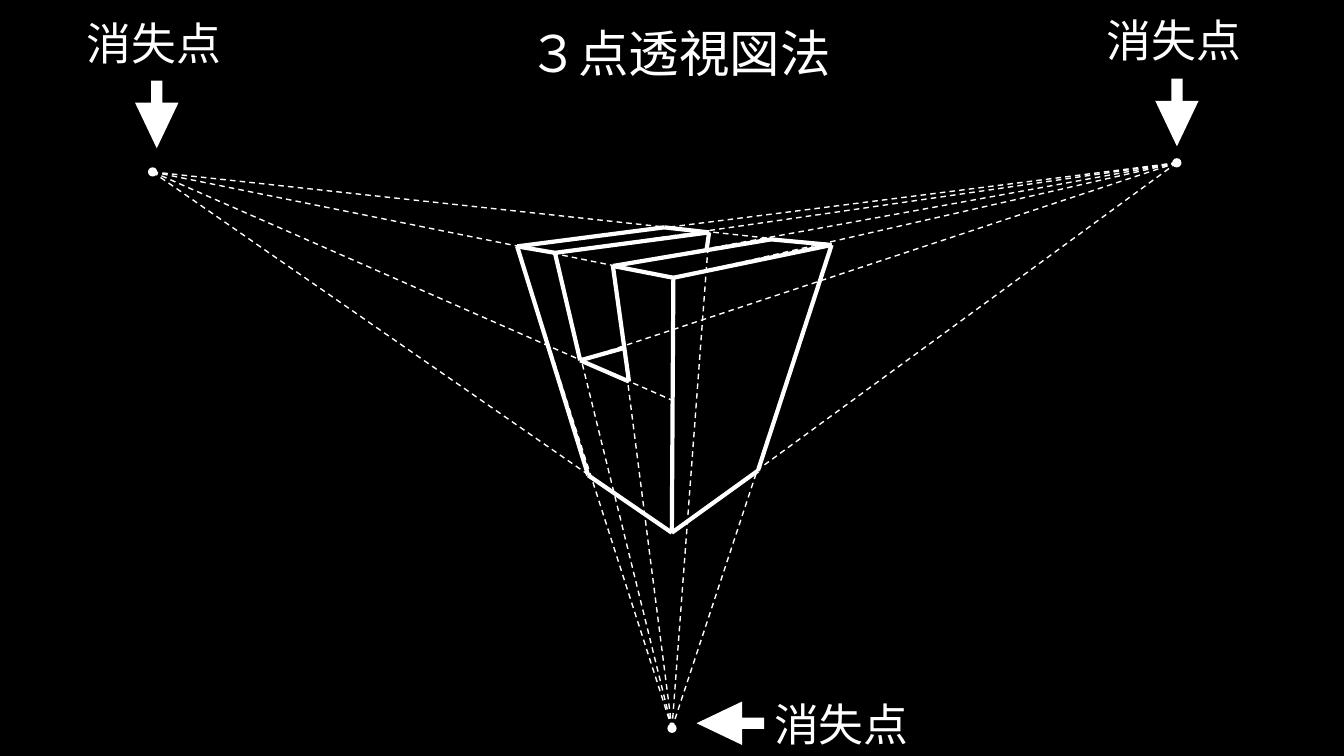
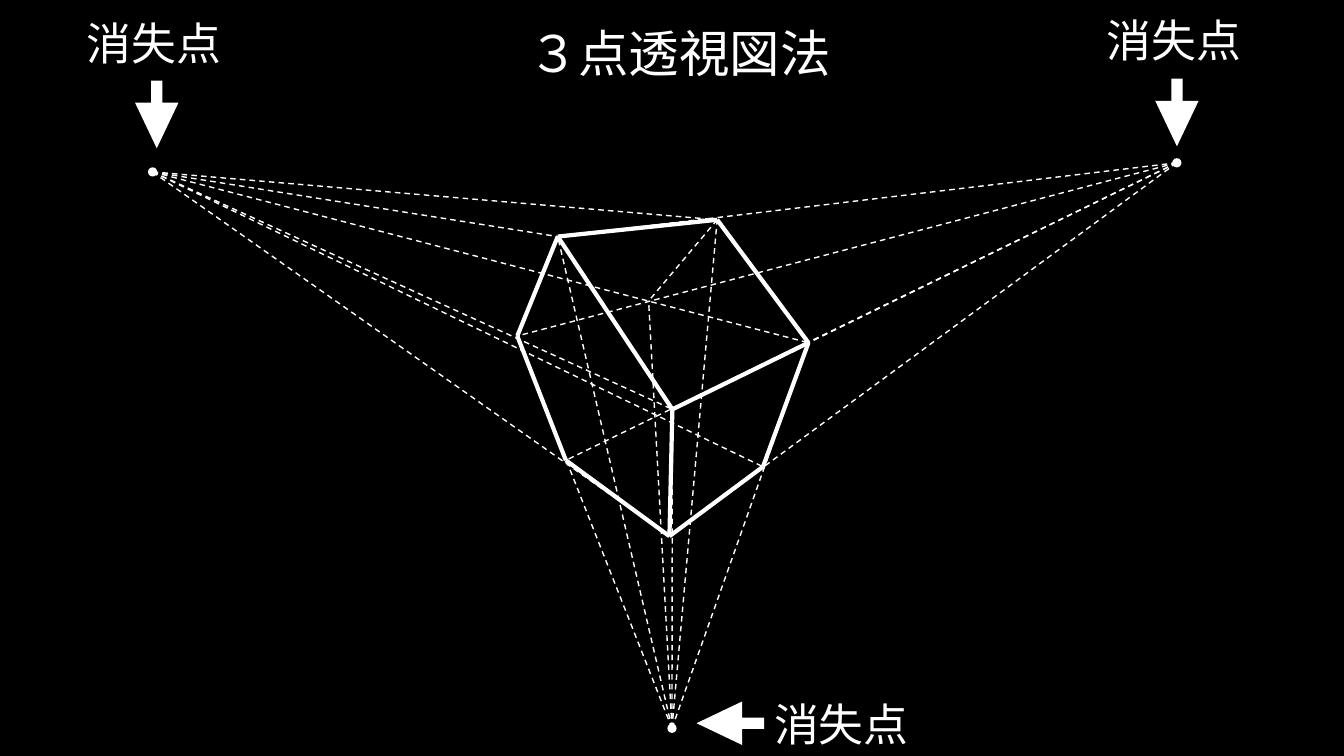
from lxml import etree
from pptx import Presentation
from pptx.dml.color import RGBColor
from pptx.enum.dml import MSO_LINE
from pptx.enum.shapes import MSO_CONNECTOR, MSO_SHAPE
from pptx.enum.text import MSO_ANCHOR, MSO_AUTO_SIZE, PP_ALIGN
from pptx.oxml.ns import qn
from pptx.util import Pt

STRAIGHT = MSO_CONNECTOR.STRAIGHT
DOT, ARROW = MSO_SHAPE.OVAL, MSO_SHAPE.LEFT_ARROW
DASH, SOLID = MSO_LINE.DASH, MSO_LINE.SOLID
LEFT, JUSTIFY = PP_ALIGN.LEFT, PP_ALIGN.JUSTIFY

INK = "FFFFFF"
PAPER = "000000"
FONT = "Noto Sans CJK JP"
TITLE = "３点透視図法"
VANISHING_LABEL = "消失点"
DOT_SIZE = 6.6
ARROW_WIDTH, ARROW_HEIGHT = 48.4, 31

VANISHING = {
    "left": (109, 122.8),
    "right": (840.6, 116.3),
    "bottom": (480, 520.2),
}
LABELS = [
    ((54.7, 7.9), (87.8, 66.2), 270),
    ((783.4, 5.8), (816.5, 64.8), 270),
    ((545.8, 493.9), (497.5, 501.1), 0),
]

notched_block = {
    "corners": {
        "top left": (369.4, 176),
        "notch left": (396.4, 180.6),
        "notch right": (437.8, 190),
        "top front": (481, 198.4),
        "top right": (594, 175),
        "notch right far": (550.8, 171),
        "notch left far": (506.5, 166),
        "top back": (474.5, 162.4),
        "floor left": (414.4, 257.4),
        "floor right": (449.3, 272.5),
        "floor far": (446.4, 248.4),
        "wall end": (504.7, 178.6),
        "base left": (420.1, 339.5),
        "base front": (479.9, 380.5),
        "base right": (541.4, 336.2),
        "front middle": (481.7, 286.6),
    },
    "edges": [
        ["top left", "base left", "base front", "base right", "top right", "top front", "base front"],
        ["top front", "notch right", "notch right far", "top right"],
        ["notch right", "floor right", "floor left", "floor far"],
        ["floor left", "notch left", "top left", "top back", "notch left far", "notch left"],
        ["notch left far", "wall end"],
    ],
    "rays": {
        "left": ["base front", "top right", "front middle", "top front"],
        "right": ["notch left", "base front", "floor left", "top left", "notch right", "top front"],
        "bottom": ["top right", "notch left far", "notch right", "top left", "notch left"],
    },
}

tilted_box = {
    "corners": {
        "top left": (398.4, 169),
        "top back": (512.3, 157),
        "top right": (577.5, 244.8),
        "top front": (480.3, 292.4),
        "side left": (369.5, 240),
        "base left": (404.2, 328.8),
        "base front": (478.2, 383),
        "base right": (545, 333.4),
        "hidden": (463.3, 215),
    },
    "edges": [
        ["top left", "side left", "base left", "base front", "base right",
         "top right", "top back", "top left", "top front", "base front"],
        ["top front", "top right"],
    ],
    "rays": {
        "left": ["base front", "top back", "top front", "top left", "top right", "base right"],
        "right": ["base left", "base front", "top front", "top left", "side left"],
        "bottom": ["top right", "side left", "top left", "top back", "hidden", "top front"],
        "top back": ["hidden"],
    },
}


def color(value):
    return RGBColor.from_string(value)


def write(box, place, text, size, align):
    box.left, box.top, box.width, box.height = [Pt(n) for n in place]
    frame = box.text_frame
    frame.text = text
    frame.word_wrap = True
    frame.auto_size = MSO_AUTO_SIZE.SHAPE_TO_FIT_TEXT
    frame.vertical_anchor = MSO_ANCHOR.TOP
    paragraph = frame.paragraphs[0]
    paragraph.alignment = align
    paragraph.font.name = FONT
    paragraph.font.size = Pt(size)
    paragraph.font.color.rgb = color(INK)
    east_asian = etree.SubElement(paragraph.font._rPr, qn("a:ea"))
    east_asian.set("typeface", FONT)


prs = Presentation()
prs.slide_width, prs.slide_height = Pt(960), Pt(540)
backdrop = prs.slide_master.background.fill
backdrop.solid()
backdrop.fore_color.rgb = color(PAPER)
title_only = prs.slide_layouts[5]

for solid in (notched_block, tilted_box):
    slide = prs.slides.add_slide(title_only)
    write(slide.shapes.title, (370, 12.2, 247, 51), TITLE, 36, LEFT)

    points = {**VANISHING, **solid["corners"]}
    rays = [(source, corner, 1, DASH)
            for source, corners in solid["rays"].items() for corner in corners]
    edges = [(start, end, 3, SOLID)
             for chain in solid["edges"] for start, end in zip(chain, chain[1:])]
    for start, end, weight, dash in rays + edges:
        x1, y1 = points[start]
        x2, y2 = points[end]
        stroke = slide.shapes.add_connector(STRAIGHT, Pt(x1), Pt(y1), Pt(x2), Pt(y2))
        stroke.line.color.rgb = color(INK)
        stroke.line.width = Pt(weight)
        stroke.line.dash_style = dash
        etree.SubElement(stroke._element.spPr, qn("a:effectLst"))

    markers = []
    for x, y in VANISHING.values():
        markers.append(slide.shapes.add_shape(
            DOT, Pt(x - DOT_SIZE / 2), Pt(y - DOT_SIZE / 2), Pt(DOT_SIZE), Pt(DOT_SIZE)))
    for (label_x, label_y), (arrow_x, arrow_y), turn in LABELS:
        label = slide.shapes.add_textbox(0, 0, 0, 0)
        write(label, (label_x, label_y, 114.5, 46), VANISHING_LABEL, 32, JUSTIFY)
        arrow = slide.shapes.add_shape(
            ARROW, Pt(arrow_x), Pt(arrow_y), Pt(ARROW_WIDTH), Pt(ARROW_HEIGHT))
        arrow.rotation = turn
        arrow.adjustments[0], arrow.adjustments[1] = 0.26, 1.05
        markers.append(arrow)
    for marker in markers:
        marker.shadow.inherit = False
        marker.fill.solid()
        marker.fill.fore_color.rgb = color(INK)
        marker.line.fill.background()

prs.save("out.pptx")
